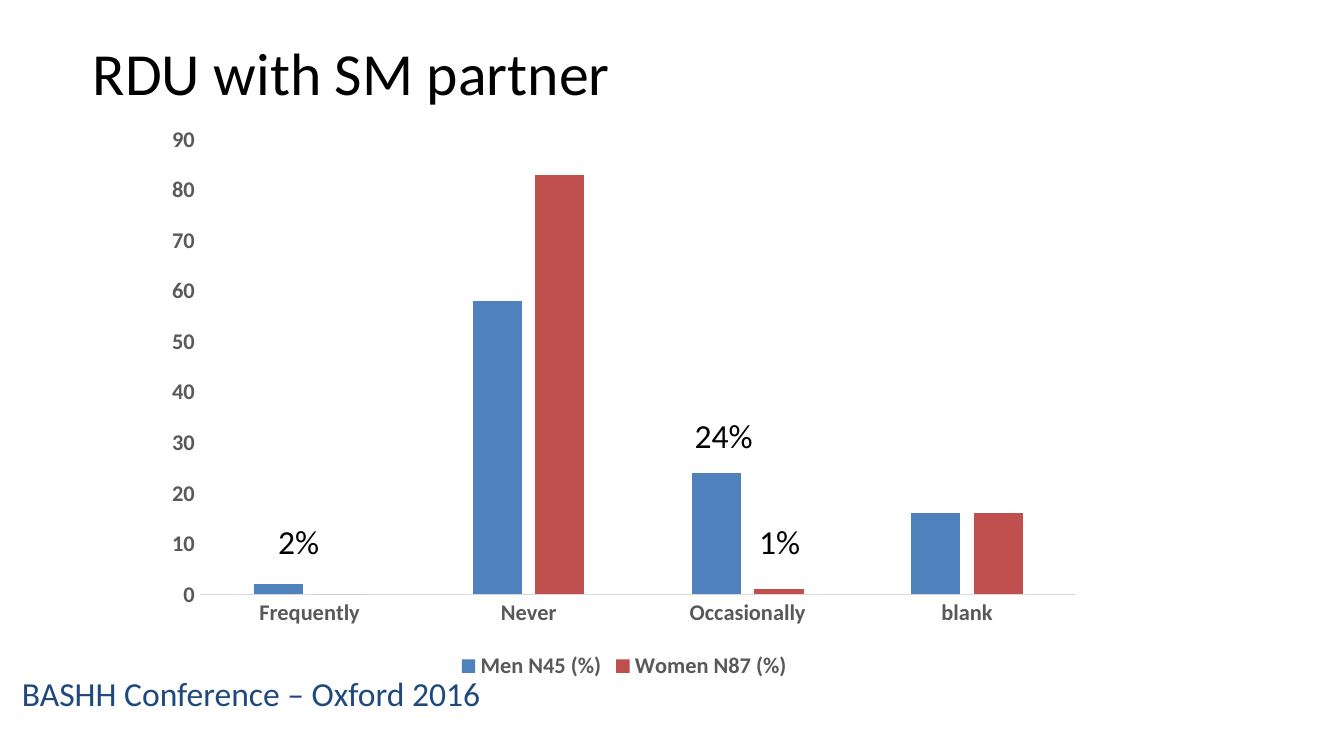
import pptx
import pptx.util
import pptx.chart.data
import pptx.dml.color
import pptx.enum.chart
import pptx.enum.text

THEME = {
    "font": "Calibri",
    "ink": "000000",
    "footer": "1F497D",
    "axis_text": "595959",
    "axis_line": "D9D9D9",
    "men": "4F81BD",
    "women": "C0504D",
    "title_size": 32,
    "text_size": 18,
    "axis_size": 12,
}

deck = pptx.Presentation()
deck.slide_width = pptx.util.Inches(10)
deck.slide_height = deck.slide_width * 9 // 16
page = deck.slides.add_slide(deck.slide_layouts[5])
unit = deck.slide_width / 100


def style_font(font, size, color, bold=False):
    font.name = THEME["font"]
    font.size = pptx.util.Pt(size)
    font.bold = bold
    font.color.rgb = pptx.dml.color.RGBColor.from_string(color)


def write_text(text, place, box=None, size=THEME["text_size"], color=THEME["ink"], wrap=True):
    if box is None:
        box = page.shapes.add_textbox(0, 0, 0, 0)
    box.left, box.top, box.width, box.height = [round(unit * length) for length in place]
    frame = box.text_frame
    frame.word_wrap = wrap
    frame.auto_size = pptx.enum.text.MSO_AUTO_SIZE.NONE
    frame.vertical_anchor = pptx.enum.text.MSO_ANCHOR.TOP
    para = frame.paragraphs[0]
    para.alignment = pptx.enum.text.PP_ALIGN.LEFT
    span = para.add_run()
    span.text = text
    style_font(span.font, size, color)


write_text("BASHH Conference – Oxford 2016", (0.65, 49.6, 47.8, 6.6), color=THEME["footer"])
write_text("RDU with SM partner", (5.9, 2.15, 41.7, 6.4), box=page.shapes.title,
           size=THEME["title_size"])

answers = pptx.chart.data.CategoryChartData()
answers.categories = ["Frequently", "Never", "Occasionally", "blank"]
answers.add_series("Men N45 (%)", [2, 58, 24, 16])
answers.add_series("Women N87 (%)", [0, 83, 1, 16])
chart = page.shapes.add_chart(
    pptx.enum.chart.XL_CHART_TYPE.COLUMN_CLUSTERED,
    *[round(unit * length) for length in (11.4, 8.55, 70.1, 42.4)],
    answers,
).chart
chart.has_title = False
style_font(chart.font, 10, THEME["ink"])

plot = chart.plots[0]
plot.gap_width = 219
plot.overlap = -27
plot.vary_by_categories = False
for series, name in zip(plot.series, ("men", "women")):
    series.invert_if_negative = False
    series.format.fill.solid()
    series.format.fill.fore_color.rgb = pptx.dml.color.RGBColor.from_string(THEME[name])

for axis in (chart.category_axis, chart.value_axis):
    axis.has_major_gridlines = False
    axis.major_tick_mark = pptx.enum.chart.XL_TICK_MARK.NONE
    axis.minor_tick_mark = pptx.enum.chart.XL_TICK_MARK.NONE
    style_font(axis.tick_labels.font, THEME["axis_size"], THEME["axis_text"], bold=True)
chart.value_axis.format.line.fill.background()
chart.value_axis.minimum_scale = 0
chart.value_axis.maximum_scale = 90
chart.value_axis.major_unit = 10
baseline = chart.category_axis.format.line
baseline.color.rgb = pptx.dml.color.RGBColor.from_string(THEME["axis_line"])
baseline.width = pptx.util.Pt(0.75)

chart.has_legend = True
chart.legend.position = pptx.enum.chart.XL_LEGEND_POSITION.BOTTOM
chart.legend.include_in_layout = False
style_font(chart.legend.font, THEME["axis_size"], THEME["axis_text"], bold=True)

for share, left, top, width in (
    ("2%", 19.7, 38.3, 5.1),
    ("1%", 55.5, 38.3, 5.1),
    ("24%", 50.7, 30.4, 6.4),
):
    write_text(share, (left, top, width, 4), wrap=False)

deck.save("out.pptx")
